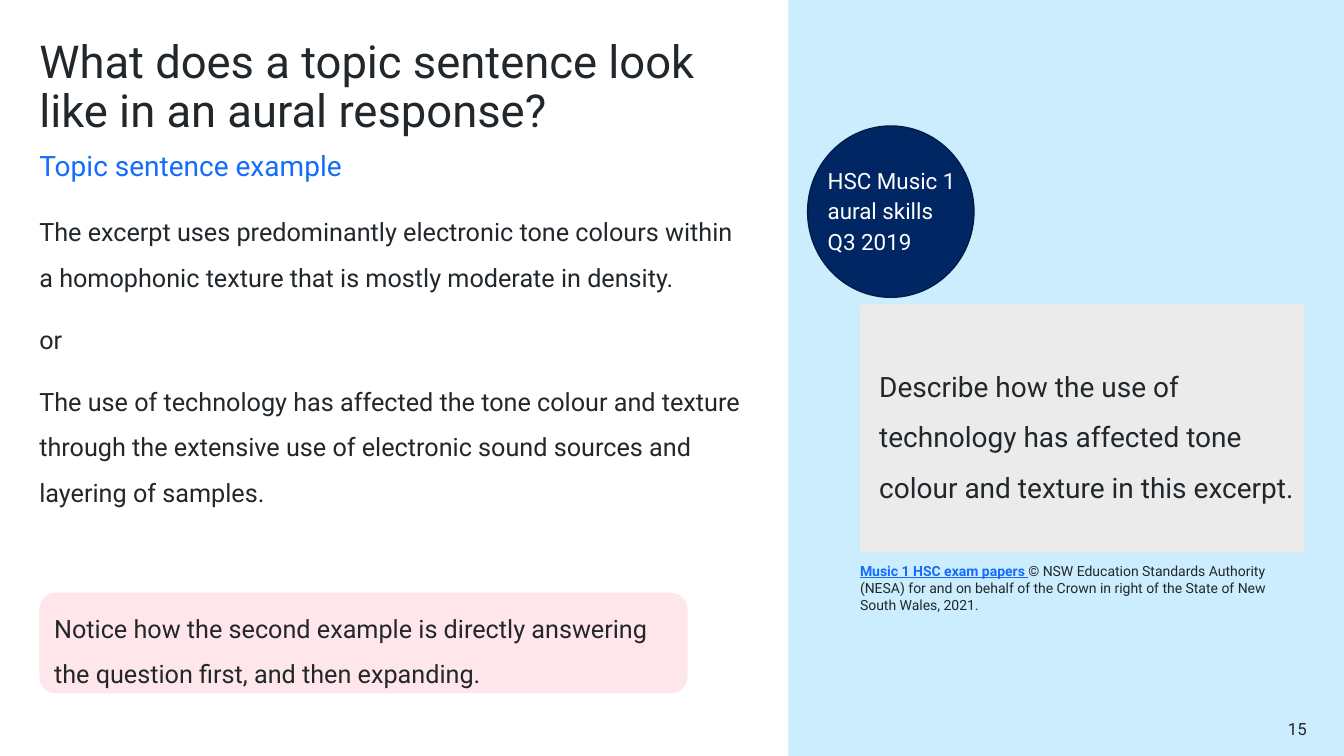
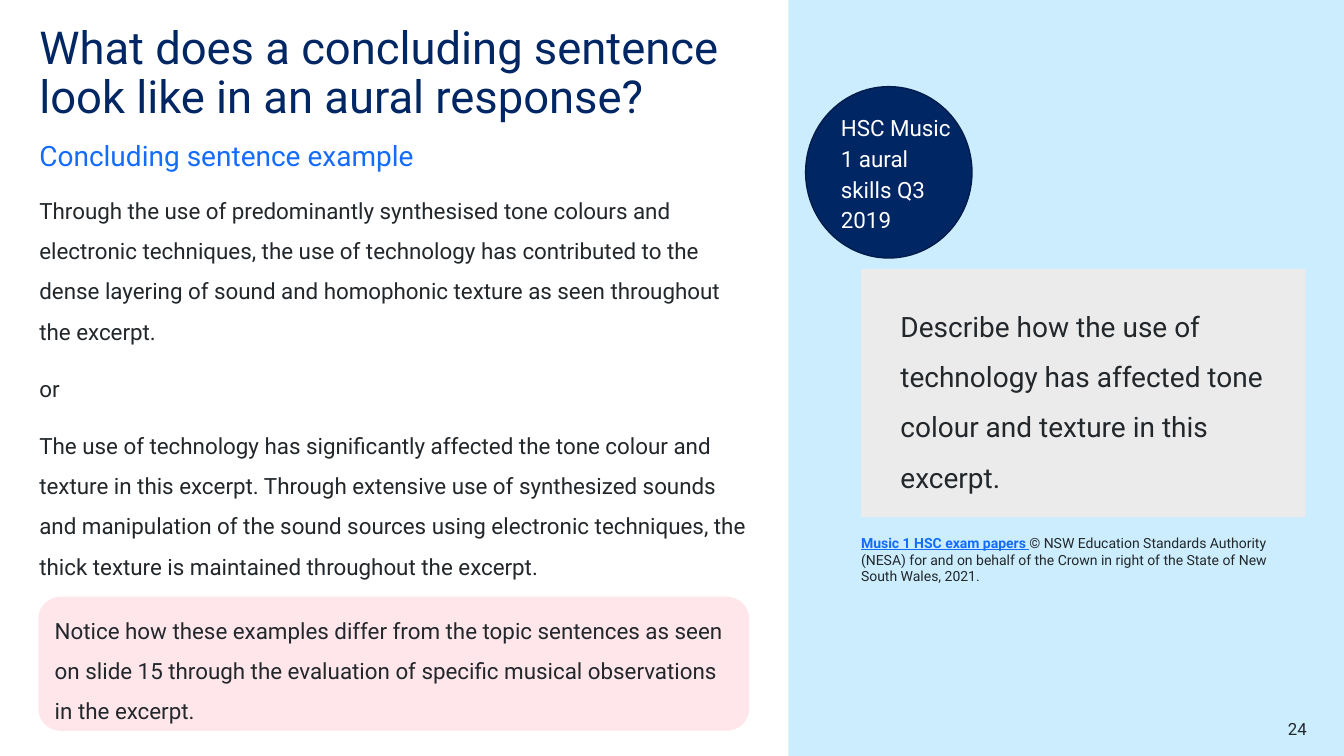
"""Build two slides on topic and concluding sentences in an aural response."""
from pptx import Presentation
from pptx.dml.color import RGBColor
from pptx.enum.shapes import MSO_SHAPE
from pptx.enum.text import MSO_ANCHOR, PP_ALIGN
from pptx.util import Inches, Pt

WHITE = RGBColor(0xFF, 0xFF, 0xFF)
INK = RGBColor(0x22, 0x27, 0x2B)
NAVY = RGBColor(0x00, 0x26, 0x64)
NAVY_EDGE = RGBColor(0x00, 0x1C, 0x4A)
BLUE = RGBColor(0x14, 0x6C, 0xFD)
SKY = RGBColor(0xCB, 0xED, 0xFD)
PINK = RGBColor(0xFF, 0xE6, 0xEA)
GREY = RGBColor(0xEB, 0xEB, 0xEB)

FONT = "Roboto"
LEFT = 0.39
COLUMN_WIDTH = 7.05
INSET = 0.1
BODY_FORMAT = {"line_spacing": 1.5, "space_after": Pt(12)}
NOTE_FORMAT = {"line_spacing": 1.5}
QUESTION = ("Describe how the use of technology has affected tone colour "
            "and texture in this excerpt.")
CREDIT_RUNS = [
    ("Music 1 HSC exam papers", {"bold": True, "underline": True}, BLUE),
    (" ", {"underline": True}, BLUE),
    ("© NSW Education Standards Authority (NESA) for and on behalf of the "
     "Crown in right of the State of New South Wales, 2021.", {}, INK),
]


def apply_format(target, values):
    """Set each named attribute on the target."""
    for name, value in values.items():
        setattr(target, name, value)


def add_run(paragraph, text, size, color, values=None):
    """Append one styled run to a paragraph."""
    run = paragraph.add_run()
    run.text = text
    apply_format(run.font, {"name": FONT, "size": Pt(size), **(values or {})})
    run.font.color.rgb = color


def set_frame(shape, anchor=MSO_ANCHOR.TOP, inset=0.0, indent=0.0):
    """Set wrapping, anchor and margins, and return the text frame."""
    frame = shape.text_frame
    vertical = Inches(inset / 2)
    apply_format(frame, {
        "word_wrap": True, "vertical_anchor": anchor,
        "margin_left": Inches(inset + indent), "margin_right": Inches(inset),
        "margin_top": vertical, "margin_bottom": vertical,
    })
    return frame


def write_paragraphs(frame, texts, size, color, values):
    """Write one paragraph for each text."""
    for index, text in enumerate(texts):
        paragraph = frame.add_paragraph() if index else frame.paragraphs[0]
        apply_format(paragraph, {"alignment": PP_ALIGN.LEFT, **values})
        add_run(paragraph, text, size, color)


def add_text(slide, box, texts, size, color, values, anchor=MSO_ANCHOR.TOP):
    """Add a text box without margins."""
    shape = slide.shapes.add_textbox(*map(Inches, box))
    write_paragraphs(set_frame(shape, anchor), texts, size, color, values)


def add_filled_shape(slide, kind, box, fill, edge=None):
    """Add a flat preset shape with an optional edge."""
    shape = slide.shapes.add_shape(kind, *map(Inches, box))
    shape.shadow.inherit = False
    shape.fill.solid()
    shape.fill.fore_color.rgb = fill
    if edge is None:
        shape.line.fill.background()
    else:
        shape.line.color.rgb = edge
        shape.line.width = Pt(1)
    return shape


def add_panel(slide, kind, box, fill, text, size, indent=0.0):
    """Add a filled shape with vertically centred text."""
    shape = add_filled_shape(slide, kind, box, fill)
    frame = set_frame(shape, MSO_ANCHOR.MIDDLE, INSET, indent)
    write_paragraphs(frame, [text], size, INK, NOTE_FORMAT)


def add_base(presentation, number):
    """Add a slide with the side band and page number."""
    slide = presentation.slides.add_slide(presentation.slide_layouts[6])
    add_filled_shape(slide, MSO_SHAPE.RECTANGLE, (7.82, 0, 5.51, 7.5), SKY)
    add_text(slide, (12.17, 7.13, 0.79, 0.2), [str(number)], 12, INK,
             {"alignment": PP_ALIGN.RIGHT})
    return slide


def add_main_column(slide, title, title_top, title_color, heading,
                    heading_top, body, body_box, body_size):
    """Add the title, heading and example paragraphs."""
    add_text(slide, (LEFT, title_top, COLUMN_WIDTH, 0.6), [title], 32.4,
             title_color, {"line_spacing": 0.9})
    add_text(slide, (LEFT, heading_top, COLUMN_WIDTH, 0.34), [heading], 20,
             BLUE, BODY_FORMAT, MSO_ANCHOR.BOTTOM)
    add_text(slide, body_box, body, body_size, INK, BODY_FORMAT)


def add_badge(slide, left, top, text_box, lines):
    """Add the round exam badge and its label."""
    add_filled_shape(slide, MSO_SHAPE.FLOWCHART_CONNECTOR,
                     (left, top, 1.65, 1.7), NAVY, NAVY_EDGE)
    add_text(slide, text_box, lines, 16, WHITE, {"line_spacing": 1.14})


def add_question(slide, left, top, indent, credit_top):
    """Add the question panel and the source credit."""
    add_panel(slide, MSO_SHAPE.RECTANGLE, (left, top, 4.41, 2.46), GREY,
              QUESTION, 20, indent)
    credit = slide.shapes.add_textbox(
        *map(Inches, (left, credit_top, 4.41, 0.5)))
    paragraph = set_frame(credit).paragraphs[0]
    for text, values, color in CREDIT_RUNS:
        add_run(paragraph, text, 10, color, values)


def add_topic_slide(presentation):
    """Build the topic sentence slide."""
    slide = add_base(presentation, 15)
    add_main_column(
        slide, "What does a topic sentence look like in an aural response?",
        0.39, INK, "Topic sentence example", 1.47,
        ["The excerpt uses predominantly electronic tone colours within a "
         "homophonic texture that is mostly moderate in density.",
         "or",
         "The use of technology has affected the tone colour and texture "
         "through the extensive use of electronic sound sources and "
         "layering of samples."],
        (LEFT, 2, COLUMN_WIDTH, 3.57), 18)
    add_panel(slide, MSO_SHAPE.ROUNDED_RECTANGLE, (LEFT, 5.88, 6.43, 1), PINK,
              "Notice how the second example is directly answering the "
              "question first, and then expanding.", 18)
    add_badge(slide, 8.01, 1.25, (8.21, 1.62, 1.4, 0.96),
              ["HSC Music 1", "aural skills", "Q3 2019"])
    add_question(slide, 8.53, 3.02, 0.09, 5.58)


def add_concluding_slide(presentation):
    """Build the concluding sentence slide."""
    slide = add_base(presentation, 24)
    add_main_column(
        slide,
        "What does a concluding sentence look like in an aural response?",
        0.25, NAVY, "Concluding sentence example", 1.37,
        ["Through the use of predominantly synthesised tone colours and "
         "electronic techniques, the use of technology has contributed to "
         "the dense layering of sound and homophonic texture as seen "
         "throughout the excerpt.",
         "or",
         "The use of technology has significantly affected the tone colour "
         "and texture in this excerpt. Through extensive use of synthesized "
         "sounds and manipulation of the sound sources using electronic "
         "techniques, the thick texture is maintained throughout the "
         "excerpt."],
        (LEFT, 1.82, COLUMN_WIDTH, 3.98), 16)
    add_panel(slide, MSO_SHAPE.ROUNDED_RECTANGLE,
              (0.38, 5.92, COLUMN_WIDTH, 1.33), PINK,
              "Notice how these examples differ from the topic sentences as "
              "seen on slide 15 through the evaluation of specific musical "
              "observations in the excerpt.", 16)
    add_badge(slide, 7.99, 0.86, (8.34, 1.1, 1.12, 1.23),
              ["HSC Music 1 aural skills Q3 2019"])
    add_question(slide, 8.54, 2.67, 0.29, 5.3)


def main():
    """Create and save the presentation."""
    presentation = Presentation()
    presentation.slide_width = Inches(13.33)
    presentation.slide_height = Inches(7.5)
    add_topic_slide(presentation)
    add_concluding_slide(presentation)
    presentation.save("out.pptx")


if __name__ == "__main__":
    main()
